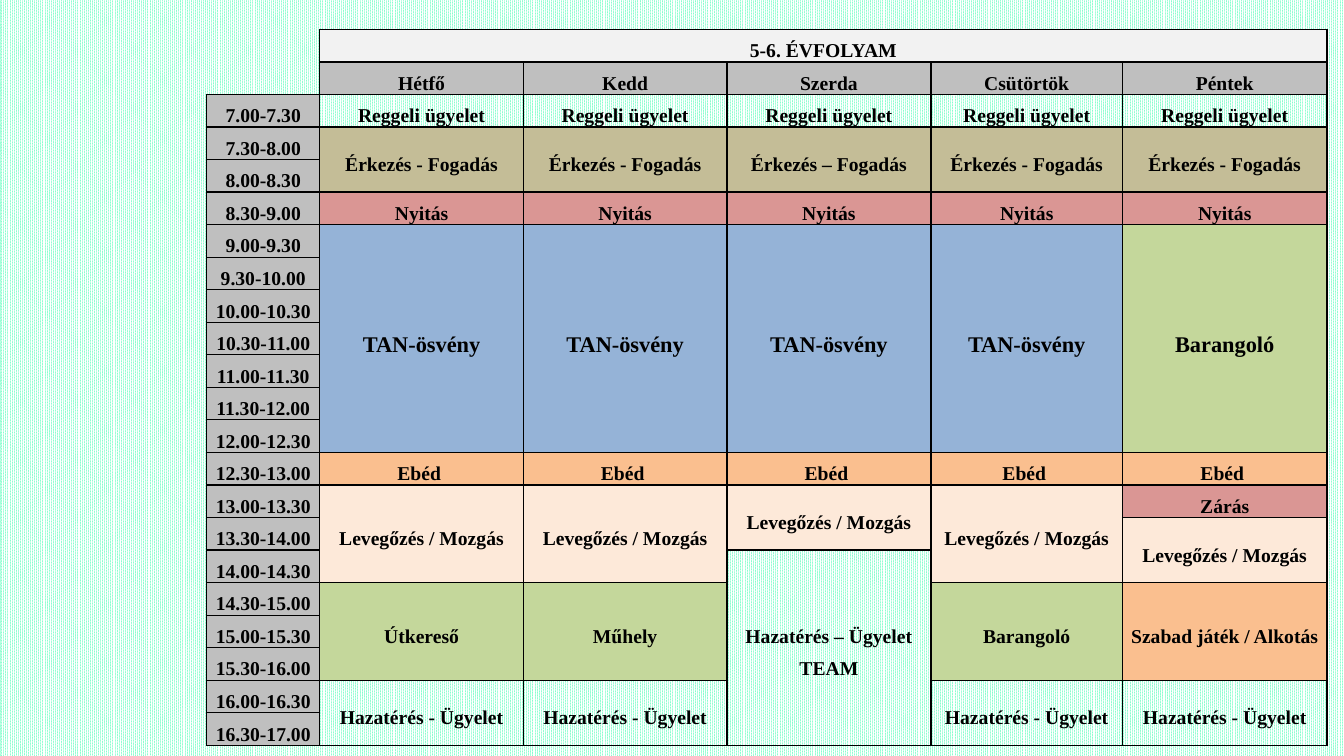
from lxml.etree import SubElement
from pptx import Presentation
from pptx.dml.color import RGBColor
from pptx.enum.dml import MSO_PATTERN
from pptx.enum.text import MSO_ANCHOR as Anchor, PP_ALIGN as Align
from pptx.oxml.ns import qn
from pptx.util import Cm, Pt

BLACK = RGBColor(0x00, 0x00, 0x00)
WHITE = RGBColor(0xFF, 0xFF, 0xFF)
MINT = RGBColor(0x88, 0xFE, 0xCE)
LIGHT_GREY = RGBColor(0xF2, 0xF2, 0xF2)
GREY = RGBColor(0xBF, 0xBF, 0xBF)
KHAKI = RGBColor(0xC4, 0xBD, 0x97)
RED = RGBColor(0xDA, 0x96, 0x94)
BLUE = RGBColor(0x95, 0xB3, 0xD7)
GREEN = RGBColor(0xC4, 0xD7, 0x9B)
ORANGE = RGBColor(0xFA, 0xBF, 0x8F)
PEACH = RGBColor(0xFD, 0xE9, 0xD9)

COLUMN_WIDTHS = [2.85, 5.13, 5.13, 5.14, 4.83, 5.15]
ROW_HEIGHT = 0.82
HALF_HOURS = range(14, 34)
HEADER_ROWS = 2


class TimetablePage:
    font = "Times New Roman"
    size = Pt(14)
    line_width = Pt(1)

    def __init__(self, deck):
        self.page = deck.slides.add_slide(deck.slide_layouts[6])

    def background(self):
        fill = self.page.background.fill
        fill.patterned()
        fill.pattern = MSO_PATTERN.PERCENT_90
        fill.fore_color.rgb = WHITE
        fill.back_color.rgb = MINT

    def grid(self, left, top, widths, row_count):
        frame = self.page.shapes.add_table(
            row_count, len(widths), Cm(left), Cm(top),
            Cm(sum(widths)), Cm(row_count * ROW_HEIGHT))
        self.table = frame.table
        self.table.first_row = False
        self.table.horz_banding = False
        for column, width in zip(self.table.columns, widths):
            column.width = Cm(width)
        for row_index, row in enumerate(self.table.rows):
            row.height = Cm(ROW_HEIGHT)
            for column_index, cell in enumerate(row.cells):
                sides = "LRTB"
                if column_index == 0 and row_index < HEADER_ROWS:
                    sides = "R" if row_index == 0 else "RB"
                self.borders(cell, sides)
                self.fill_cell(cell, "", None, Anchor.MIDDLE, self.size)

    def borders(self, cell, sides):
        properties = cell._tc.get_or_add_tcPr()
        for side in "LRTB":
            line = SubElement(properties, qn(f"a:ln{side}"), w=str(self.line_width))
            if side in sides:
                solid = SubElement(line, qn("a:solidFill"))
                SubElement(solid, qn("a:srgbClr"), val=str(BLACK))
            else:
                SubElement(line, qn("a:noFill"))

    def fill_cell(self, cell, text, color, anchor, size):
        cell.margin_left = cell.margin_right = Cm(0.08)
        cell.margin_top = cell.margin_bottom = 0
        cell.vertical_anchor = anchor
        if color is None:
            cell.fill.background()
        else:
            cell.fill.solid()
            cell.fill.fore_color.rgb = color
        cell.text_frame.text = text
        for para in cell.text_frame.paragraphs:
            para.alignment = Align.CENTER
            para.line_spacing = 1.5
            para.font.name = self.font
            para.font.size = size
            para.font.bold = True
            para.font.color.rgb = BLACK

    def block(self, row, column, text, color, rows=1, columns=1,
              anchor=Anchor.MIDDLE, size=None):
        cell = self.table.cell(row, column)
        if rows * columns > 1:
            cell.merge(self.table.cell(row + rows - 1, column + columns - 1))
        self.fill_cell(cell, text, color, anchor, size or self.size)

    def day(self, column, name, activities):
        self.block(1, column, name, GREY, anchor=Anchor.BOTTOM)
        row = HEADER_ROWS
        for text, color, rows in activities:
            size = Pt(16) if rows == 7 else None
            self.block(row, column, text, color, rows, size=size)
            row += rows


def clock(half_hour):
    return f"{half_hour // 2}.{half_hour % 2 * 30:02}"


def schedule(lesson, afternoon, dash="-"):
    return [
        ("Reggeli ügyelet", None, 1),
        (f"Érkezés {dash} Fogadás", KHAKI, 2),
        ("Nyitás", RED, 1),
        (*lesson, 7),
        ("Ebéd ", ORANGE, 1),
        *afternoon,
    ]


def outdoors(rows):
    return ("Levegőzés / Mozgás", PEACH, rows)


def main():
    trail = ("TAN-ösvény", BLUE)
    roaming = ("Barangoló", GREEN)
    home = ("Hazatérés - Ügyelet", None, 2)
    week = {
        "Hétfő": schedule(trail, [outdoors(3), ("Útkereső", GREEN, 3), home]),
        "Kedd": schedule(trail, [outdoors(3), ("Műhely", GREEN, 3), home]),
        "Szerda": schedule(
            trail, [outdoors(2), ("Hazatérés – Ügyelet\nTEAM", None, 6)], "–"),
        "Csütörtök": schedule(trail, [outdoors(3), (*roaming, 3), home]),
        "Péntek": schedule(
            roaming, [("Zárás", RED, 1), outdoors(2),
                      ("Szabad játék / Alkotás", ORANGE, 3), home]),
    }

    deck = Presentation()
    deck.slide_width = Cm(33.87)
    deck.slide_height = Cm(19.05)
    timetable = TimetablePage(deck)
    timetable.background()
    timetable.grid(5.21, 0.74, COLUMN_WIDTHS, HEADER_ROWS + len(HALF_HOURS))
    timetable.block(0, 1, "5-6. ÉVFOLYAM", LIGHT_GREY, columns=5, anchor=Anchor.BOTTOM)
    for row, start in enumerate(HALF_HOURS, HEADER_ROWS):
        timetable.block(row, 0, f"{clock(start)}-{clock(start + 1)}", GREY,
                        anchor=Anchor.BOTTOM)
    for column, (name, activities) in enumerate(week.items(), 1):
        timetable.day(column, name, activities)
    deck.save("out.pptx")


if __name__ == "__main__":
    main()
